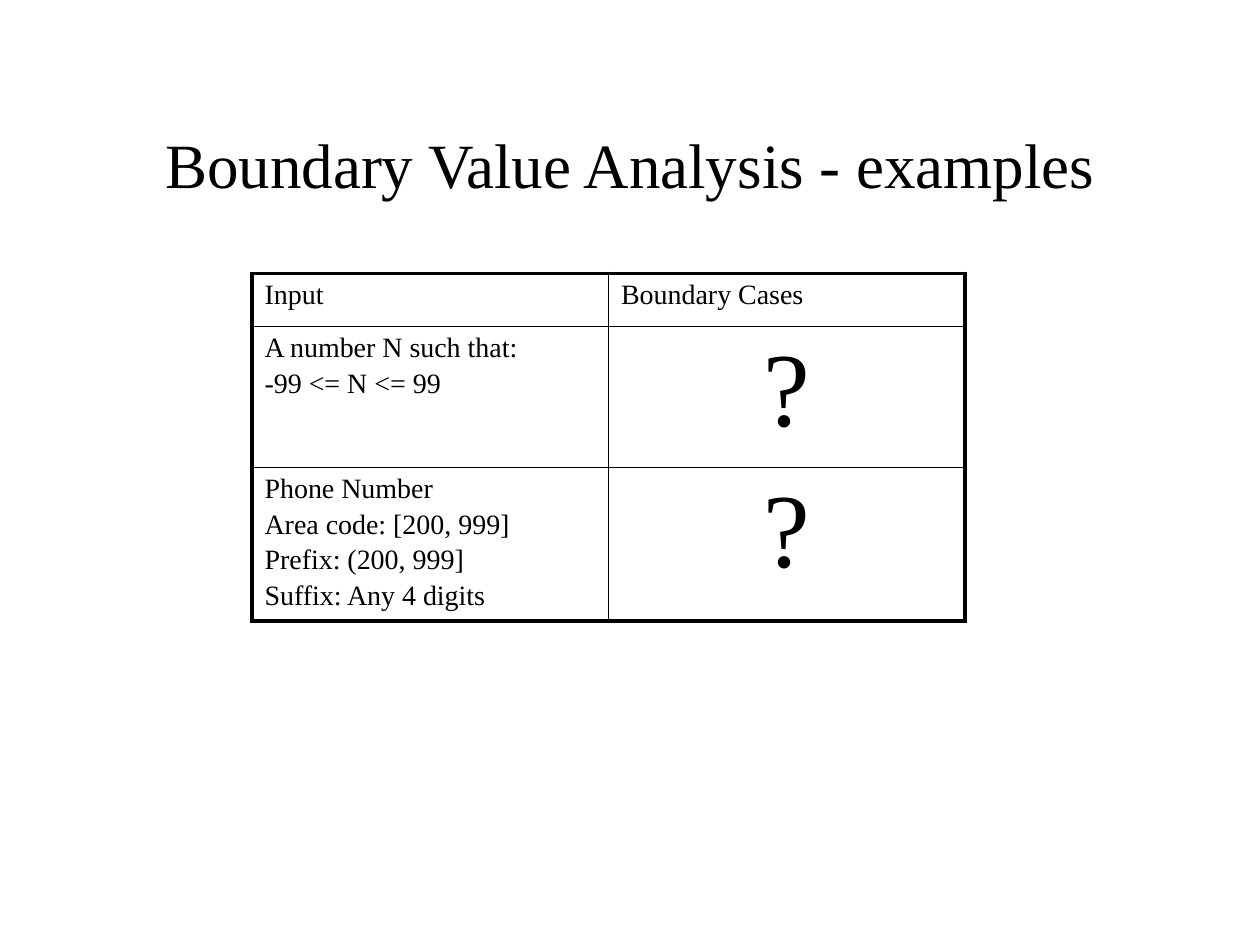
from dataclasses import dataclass

import lxml.etree
import pptx
import pptx.dml.color
import pptx.enum.text
import pptx.oxml.ns
import pptx.table
import pptx.text.text
import pptx.util
from pptx.util import Inches

BLACK = pptx.dml.color.RGBColor(0x00, 0x00, 0x00)
FONT = "Times New Roman"
LEFT = pptx.enum.text.PP_ALIGN.LEFT
CENTER = pptx.enum.text.PP_ALIGN.CENTER
OUTER_WIDTH = 2.25
INNER_WIDTH = 1


@dataclass(frozen=True)
class CellText:
    lines: tuple[str, ...]
    size: float = 16
    alignment: pptx.enum.text.PP_ALIGN = LEFT
    space_before: float = 2.5


UNKNOWN = CellText(("?",), size=60, alignment=CENTER, space_before=0)
ROWS = (
    (CellText(("Input",)), CellText(("Boundary Cases",))),
    (CellText(("A number N such that:", "-99 <= N <= 99")), UNKNOWN),
    (
        CellText((
            "Phone Number",
            "Area code: [200, 999]",
            "Prefix: (200, 999]",
            "Suffix: Any 4 digits",
        )),
        UNKNOWN,
    ),
)
ROW_HEIGHTS = (0.42, 1.12, 1.22)
COLUMN_WIDTHS = (2.83, 2.83)


def write_text(
    frame: pptx.text.text.TextFrame,
    lines: tuple[str, ...],
    *,
    size: float,
    alignment: pptx.enum.text.PP_ALIGN,
    space_before: float = 0,
) -> None:
    for index, line in enumerate(lines):
        paragraph = frame.add_paragraph() if index else frame.paragraphs[0]
        paragraph.alignment = alignment
        paragraph.space_before = pptx.util.Pt(space_before)
        run = paragraph.add_run()
        run.text = line
        run.font.name = FONT
        run.font.size = pptx.util.Pt(size)
        run.font.color.rgb = BLACK


def set_borders(cell: pptx.table._Cell, outer_sides: dict[str, bool]) -> None:
    qualify = pptx.oxml.ns.qn
    properties = cell._tc.get_or_add_tcPr()
    for index, (side, is_outer) in enumerate(outer_sides.items()):
        width = pptx.util.Pt(OUTER_WIDTH if is_outer else INNER_WIDTH)
        line = lxml.etree.Element(qualify(f"a:ln{side}"), w=str(int(width)))
        fill = lxml.etree.SubElement(line, qualify("a:solidFill"))
        lxml.etree.SubElement(fill, qualify("a:srgbClr"), val=str(BLACK))
        properties.insert(index, line)


def add_boundary_table(slide: pptx.slide.Slide) -> None:
    table = slide.shapes.add_table(
        len(ROWS), len(COLUMN_WIDTHS), Inches(2), Inches(2.17),
        Inches(sum(COLUMN_WIDTHS)), Inches(sum(ROW_HEIGHTS)),
    ).table
    table.first_row = False
    table.horz_banding = False
    for column, width in zip(table.columns, COLUMN_WIDTHS):
        column.width = Inches(width)
    for row, height in zip(table.rows, ROW_HEIGHTS):
        row.height = Inches(height)

    last_row, last_column = len(ROWS) - 1, len(COLUMN_WIDTHS) - 1
    for row_index, row_texts in enumerate(ROWS):
        for column_index, text in enumerate(row_texts):
            cell = table.cell(row_index, column_index)
            cell.fill.background()
            cell.vertical_anchor = pptx.enum.text.MSO_ANCHOR.TOP
            write_text(
                cell.text_frame, text.lines, size=text.size,
                alignment=text.alignment, space_before=text.space_before,
            )
            set_borders(cell, {
                "L": column_index == 0,
                "R": column_index == last_column,
                "T": row_index == 0,
                "B": row_index == last_row,
            })


def main() -> None:
    presentation = pptx.Presentation()
    presentation.slide_width = Inches(10)
    presentation.slide_height = Inches(7.5)
    slide = presentation.slides.add_slide(presentation.slide_layouts[5])

    title = slide.shapes.title
    title.left, title.top = Inches(0.75), Inches(0.67)
    title.width, title.height = Inches(8.5), Inches(1.25)
    title.text_frame.vertical_anchor = pptx.enum.text.MSO_ANCHOR.MIDDLE
    write_text(
        title.text_frame, ("Boundary Value Analysis - examples",),
        size=36, alignment=CENTER,
    )
    add_boundary_table(slide)
    presentation.save("out.pptx")


if __name__ == "__main__":
    main()
